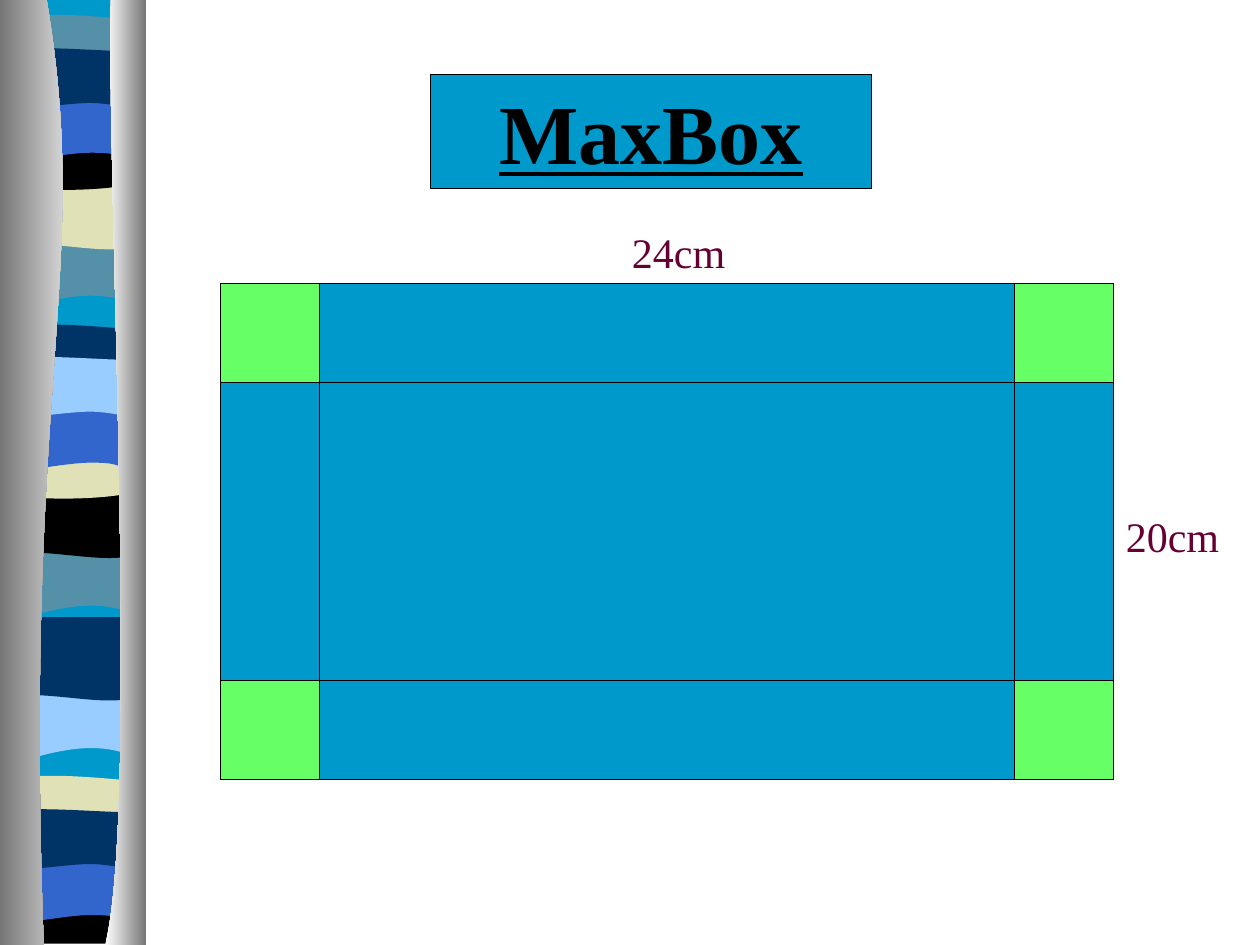
from pptx import Presentation
from pptx.dml.color import RGBColor
from pptx.enum.shapes import MSO_CONNECTOR as Connector, MSO_SHAPE as Preset
from pptx.enum.text import MSO_ANCHOR as Anchor, MSO_AUTO_SIZE as AutoSize, PP_ALIGN as Align
from pptx.oxml.ns import qn
from pptx.util import Pt
from lxml.etree import SubElement

FONT = "Times New Roman"
BLACK, BLUE, GREEN, PLUM = "000000", "0099CC", "66FF66", "660033"
STEEL, SAND, NAVY, ROYAL, SKY = "5490A8", "E1E1B7", "003366", "3366CC", "99CCFF"

BAND_LEFT, BAND_WIDTH = 4, 78
SHEET_LEFT, SHEET_TOP, SHEET_WIDTH, SHEET_HEIGHT = 126, 162, 510.25, 283.5
CORNER = 56.7

PROFILES = {
    "tilted": [(78, 0), (78, 43), (56, 32, 36, 34, 0, 46), (0, 0)],
    "hanging": [(78, -6.7), (78, 36), (65, 48, 24, 34, 0, 39), (0, -6.7)],
    "arched": [(78, 0.5), (78, 21), (65, 24.5, 13, 24.5, 0, 21), (0, 0.5),
               (5, -3.5, 16.5, -3, 29.5, -3), (42.5, -3, 68, -0.7, 78, 0.5)],
    "dipped": [(78, 0), (78, 25), (65, 32, 13, 32, 0, 28), (0, 0),
               (47.5, 3.6, 61, 0, 78, 0)],
    "hollow": [(78, 0), (78, 46), (65.5, 34, 60.5, 34, 47.5, 34),
               (34.5, 34, 11.5, 39, 0, 39), (0, 0)],
    "rippled": [(78, -0.4), (78, 31), (73, 34, 60.5, 29.3, 47.5, 29.3),
                (34.5, 29.3, 8, 34, 0, 32), (0, -0.4),
                (11, -4, 52.5, -0.4, 65.5, -0.4)],
    "flat": [(78, 0), (78, 26.6), (0, 26.6), (0, 0), (47.5, 3.6, 61, 0, 78, 0)],
}
STRIPES = [
    ("tilted", 133.2, STEEL), ("hanging", 101.5, SAND), ("arched", 11.5, STEEL),
    ("dipped", 77.8, BLACK), ("hollow", 53.3, ROYAL), ("rippled", 29.5, NAVY),
    ("tilted", 310.3, STEEL), ("hanging", 277.9, BLACK), ("arched", 188.6, NAVY),
    ("dipped", 254.2, SAND), ("hollow", 230.4, ROYAL), ("rippled", 205.9, SKY),
    ("tilted", 391.7, SKY), ("hanging", 359.3, NAVY), ("arched", 446.4, SAND),
    ("flat", 512.6, BLACK), ("hollow", 488.9, ROYAL), ("rippled", 464.4, NAVY),
]
LEFT_EDGE = [(26.7, 0), (52.7, 155.5, 13, 213, 25, 540), (0, 540), (0, 0)]
RIGHT_EDGE = [(63.4, 0), (60.5, 90, 80, 465, 60, 540), (83.5, 540), (83.5, 0)]


def color(hex_text):
    """Return the colour for a hex string."""
    return RGBColor.from_string(hex_text)


def paint(shape, fill, line=None, width=0.75):
    """Give a shape a plain fill and an optional outline."""
    shape.fill.solid()
    shape.fill.fore_color.rgb = color(fill)
    if line:
        shape.line.color.rgb = color(line)
        shape.line.width = Pt(width)
    else:
        shape.line.fill.background()


def add_rectangle(slide, left, top, width, height, fill, line=None):
    """Add a rectangle without a shadow."""
    shape = slide.shapes.add_shape(Preset.RECTANGLE, Pt(left), Pt(top), Pt(width), Pt(height))
    shape.shadow.inherit = False
    paint(shape, fill, line)


def add_rule(slide, x1, y1, x2, y2):
    """Add a thin black straight line."""
    connector = slide.shapes.add_connector(Connector.STRAIGHT, Pt(x1), Pt(y1), Pt(x2), Pt(y2))
    connector.line.color.rgb = color(BLACK)
    connector.line.width = Pt(0.75)
    SubElement(connector._element.spPr, qn("a:effectLst"))


def bend(shape, steps):
    """Merge the three segments of each six-number step into one Bézier curve."""
    segments = iter(list(shape._element.iter(qn("a:lnTo"))))
    for step in steps[1:]:
        first = next(segments)
        if len(step) == 6:
            first.tag = qn("a:cubicBezTo")
            for segment in (next(segments), next(segments)):
                first.append(segment[0])
                segment.getparent().remove(segment)


def add_outline(slide, steps, left=0, top=0):
    """Add a closed freeform of straight and Bézier steps, with no line or shadow."""
    points = [(Pt(left + step[i]), Pt(top + step[i + 1]))
              for step in steps for i in range(0, len(step), 2)]
    builder = slide.shapes.build_freeform(*points[0], scale=1)
    builder.add_line_segments(points[1:], close=True)
    shape = builder.convert_to_shape()
    bend(shape, steps)
    shape.shadow.inherit = False
    shape.line.fill.background()
    return shape


def add_edge(slide, steps, start, end):
    """Add a full-height edge shaded from left to right."""
    fill = add_outline(slide, steps).fill
    fill.gradient()
    fill.gradient_angle = 0
    for stop, shade in zip(fill.gradient_stops, (start, end)):
        stop.color.rgb = color(shade)


def write(shape, text, size, fill, align=Align.LEFT, bold=False, underline=False):
    """Write one formatted line of text in a shape."""
    frame = shape.text_frame
    frame.word_wrap = True
    frame.auto_size = AutoSize.NONE
    frame.vertical_anchor = Anchor.TOP
    paragraph = frame.paragraphs[0]
    paragraph.alignment = align
    run = paragraph.add_run()
    run.text = text
    run.font.name = FONT
    run.font.size = Pt(size)
    run.font.bold = bold
    run.font.underline = underline
    run.font.color.rgb = color(fill)


def add_title(slide, text):
    """Place and format the title placeholder."""
    title = slide.shapes.title
    title.left, title.top, title.width, title.height = Pt(246), Pt(42.5), Pt(252), Pt(65.2)
    paint(title, BLUE, BLACK, 0.5)
    write(title, text, 48, BLACK, align=Align.CENTER, bold=True, underline=True)


def add_label(slide, text, left, top):
    """Add a dimension label."""
    box = slide.shapes.add_textbox(Pt(left), Pt(top), Pt(84), Pt(36))
    write(box, text, 24, PLUM)


def add_side_band(slide):
    """Draw the wavy striped band with its shaded edges."""
    add_rectangle(slide, BAND_LEFT, 0, BAND_WIDTH, 538.5, BLUE)
    for profile, top, fill in STRIPES:
        paint(add_outline(slide, PROFILES[profile], BAND_LEFT, top), fill)
    add_edge(slide, LEFT_EDGE, "767676", "FFFFFF")
    add_edge(slide, RIGHT_EDGE, "FFFFFF", "767676")


def add_sheet(slide):
    """Draw the sheet with its cut corners and fold lines."""
    right, bottom = SHEET_LEFT + SHEET_WIDTH, SHEET_TOP + SHEET_HEIGHT
    fold_left, fold_right = SHEET_LEFT + CORNER, right - CORNER
    fold_top, fold_bottom = SHEET_TOP + CORNER, bottom - CORNER
    add_rectangle(slide, SHEET_LEFT, SHEET_TOP, SHEET_WIDTH, SHEET_HEIGHT, BLUE, BLACK)
    for left in (SHEET_LEFT, fold_right):
        for top in (SHEET_TOP, fold_bottom):
            add_rectangle(slide, left, top, CORNER, CORNER, GREEN, BLACK)
    add_rule(slide, 180, fold_top, 582, fold_top)
    add_rule(slide, 178, fold_bottom, fold_right, fold_bottom)
    for x in (fold_left, fold_right):
        add_rule(slide, x, fold_top, x, fold_bottom)


def main():
    """Build and save the slide."""
    presentation = Presentation()
    presentation.slide_width, presentation.slide_height = Pt(720), Pt(540)
    slide = presentation.slides.add_slide(presentation.slide_layouts[5])
    add_side_band(slide)
    add_title(slide, "MaxBox")
    add_sheet(slide)
    add_label(slide, "24cm", 354, 126)
    add_label(slide, "20cm", 636.2, 288)
    presentation.save("out.pptx")


if __name__ == "__main__":
    main()
